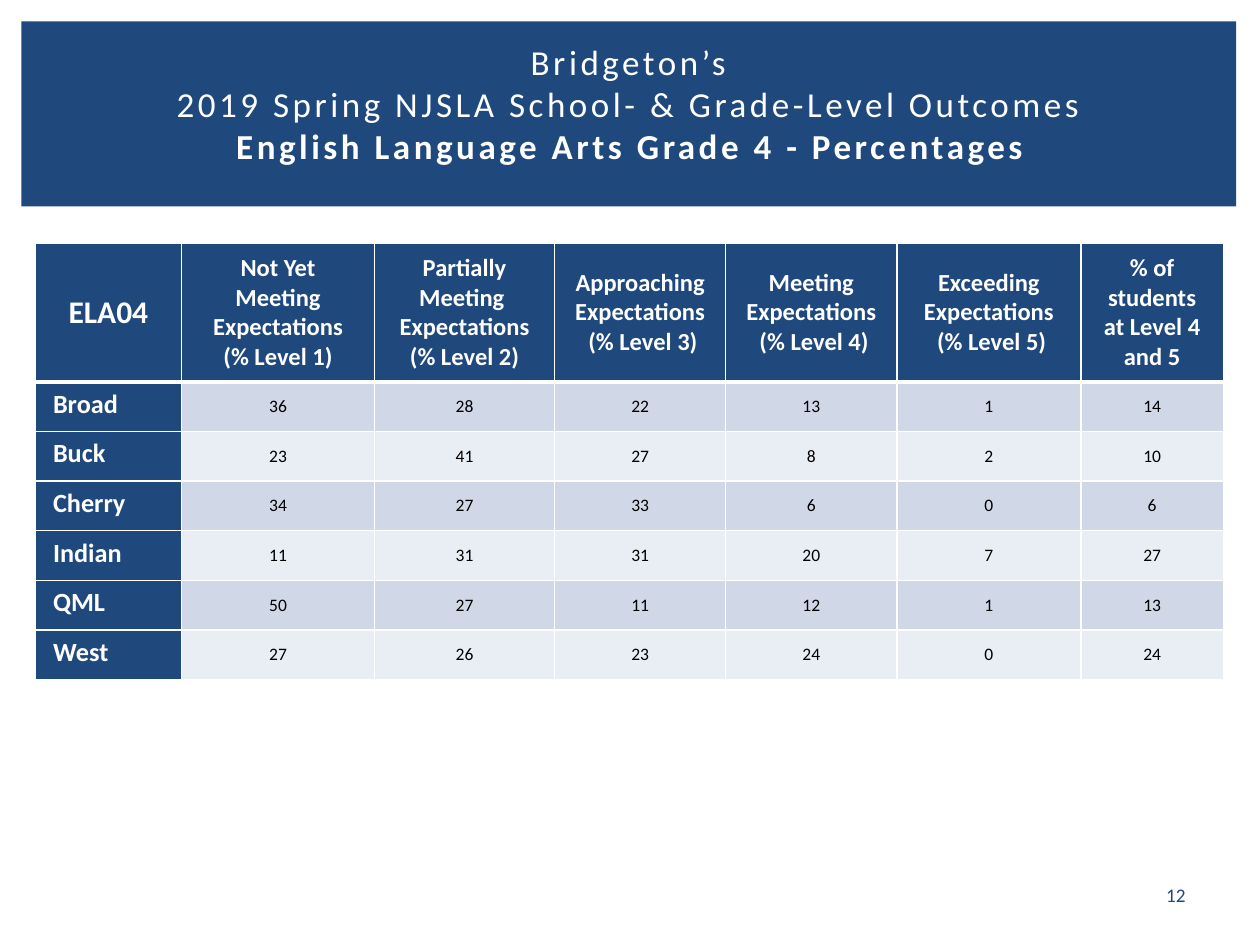
from lxml.etree import SubElement
from pptx import Presentation
from pptx.dml.color import RGBColor
from pptx.enum.shapes import MSO_SHAPE
from pptx.enum.text import MSO_ANCHOR, MSO_AUTO_SIZE, PP_ALIGN
from pptx.oxml.ns import qn
from pptx.util import Cm, Pt

NAVY = RGBColor(0x1F, 0x49, 0x7D)
WHITE = RGBColor(0xFF, 0xFF, 0xFF)
BLACK = RGBColor(0, 0, 0)
BANDS = (RGBColor(0xD0, 0xD8, 0xE8), RGBColor(0xE9, 0xED, 0xF4))

TITLE = "Bridgeton’s\v2019 Spring NJSLA School- & Grade-Level Outcomes\v"
SUBJECT = "English Language Arts Grade 4 - Percentages"
PAGE = "12"
HEADERS = [
    "ELA04",
    "Not Yet Meeting Expectations\n(% Level 1)",
    "Partially Meeting \nExpectations\n(% Level 2)",
    "Approaching Expectations\n (% Level 3)",
    "Meeting Expectations\n (% Level 4)",
    "Exceeding Expectations\n (% Level 5)",
    "% of students at Level 4 and 5",
]
SCHOOLS = [
    ("Broad", 36, 28, 22, 13, 1, 14),
    ("Buck", 23, 41, 27, 8, 2, 10),
    ("Cherry", 34, 27, 33, 6, 0, 6),
    ("Indian", 11, 31, 31, 20, 7, 27),
    ("QML", 50, 27, 11, 12, 1, 13),
    ("West", 27, 26, 23, 24, 0, 24),
]
COL_WIDTHS = (2.95, 3.89, 3.63, 3.45, 3.45, 3.71, 2.87)
HEADER_HEIGHT, ROW_HEIGHT = 2.8, 1.0


def write(p, text, size=14, color=WHITE, bold=False, align=PP_ALIGN.CENTER, spacing=0):
    p.alignment = align
    for i, line in enumerate(text.split("\v")):
        if i:
            p.add_line_break()
        if line:
            r = p.add_run()
            r.text = line
            r.font.name = "Calibri"
            r.font.size = Pt(size)
            r.font.bold = bold
            r.font.color.rgb = color
            if spacing:
                r.font._element.set("spc", str(spacing * 100))


def set_borders(cell, bottom):
    tcPr = cell._tc.get_or_add_tcPr()
    for i, side in enumerate(("lnL", "lnR", "lnT", "lnB")):
        width = bottom if side == "lnB" else 1
        ln = tcPr.makeelement(qn(f"a:{side}"), {"w": str(Pt(width))})
        fill = SubElement(ln, qn("a:solidFill"))
        SubElement(fill, qn("a:srgbClr"), val=str(WHITE))
        tcPr.insert(i, ln)


def fill_cell(cell, text, fill, bottom=1, anchor=MSO_ANCHOR.MIDDLE, **fmt):
    cell.fill.solid()
    cell.fill.fore_color.rgb = fill
    cell.vertical_anchor = anchor
    cell.margin_left = cell.margin_right = Cm(0.36)
    cell.margin_top = cell.margin_bottom = Cm(0.13)
    tf = cell.text_frame
    for i, line in enumerate(text.split("\n")):
        write(tf.add_paragraph() if i else tf.paragraphs[0], line, **fmt)
    set_borders(cell, bottom)


def add_banner(s):
    sp = s.shapes.add_shape(MSO_SHAPE.RECTANGLE, Cm(0.43), Cm(0.43), Cm(24.49), Cm(3.73))
    sp.shadow.inherit = False
    sp.fill.solid()
    sp.fill.fore_color.rgb = NAVY
    sp.line.fill.background()
    title = s.shapes.title
    sp.element.addnext(title.element)
    title.left, title.top, title.width, title.height = Cm(0.71), Cm(0.99), Cm(23.98), Cm(2.92)
    tf = title.text_frame
    tf.auto_size = MSO_AUTO_SIZE.NONE
    tf.word_wrap = True
    tf.vertical_anchor = MSO_ANCHOR.MIDDLE
    tf.margin_top, tf.margin_bottom = 0, Cm(0.74)
    p = tf.paragraphs[0]
    write(p, TITLE, size=20, spacing=2)
    write(p, SUBJECT, size=20, spacing=2, bold=True)


def add_results(s):
    height = HEADER_HEIGHT + ROW_HEIGHT * len(SCHOOLS)
    table = s.shapes.add_table(len(SCHOOLS) + 1, len(HEADERS), Cm(0.71), Cm(4.9),
                               Cm(sum(COL_WIDTHS)), Cm(height)).table
    for col, width in zip(table.columns, COL_WIDTHS):
        col.width = Cm(width)
    for i, row in enumerate(table.rows):
        row.height = Cm(ROW_HEIGHT if i else HEADER_HEIGHT)
    for c, text in enumerate(HEADERS):
        fill_cell(table.cell(0, c), text, NAVY, bottom=3, size=14 if c else 18, bold=True)
    for i, (school, *values) in enumerate(SCHOOLS):
        fill_cell(table.cell(i + 1, 0), school, NAVY, anchor=MSO_ANCHOR.TOP,
                  size=15, bold=True, align=PP_ALIGN.LEFT)
        for c, value in enumerate(values, 1):
            fill_cell(table.cell(i + 1, c), str(value), BANDS[i % 2], size=10, color=BLACK)


def add_page_number(s):
    tf = s.shapes.add_textbox(Cm(22.89), Cm(17.65), Cm(1.63), Cm(0.76)).text_frame
    tf.word_wrap = True
    tf.vertical_anchor = MSO_ANCHOR.MIDDLE
    write(tf.paragraphs[0], PAGE, size=11, color=NAVY)


def main():
    prs = Presentation()
    prs.slide_width, prs.slide_height = Cm(25.4), Cm(19.05)
    s = prs.slides.add_slide(prs.slide_layouts[5])
    add_banner(s)
    add_results(s)
    add_page_number(s)
    prs.save("out.pptx")


if __name__ == "__main__":
    main()
